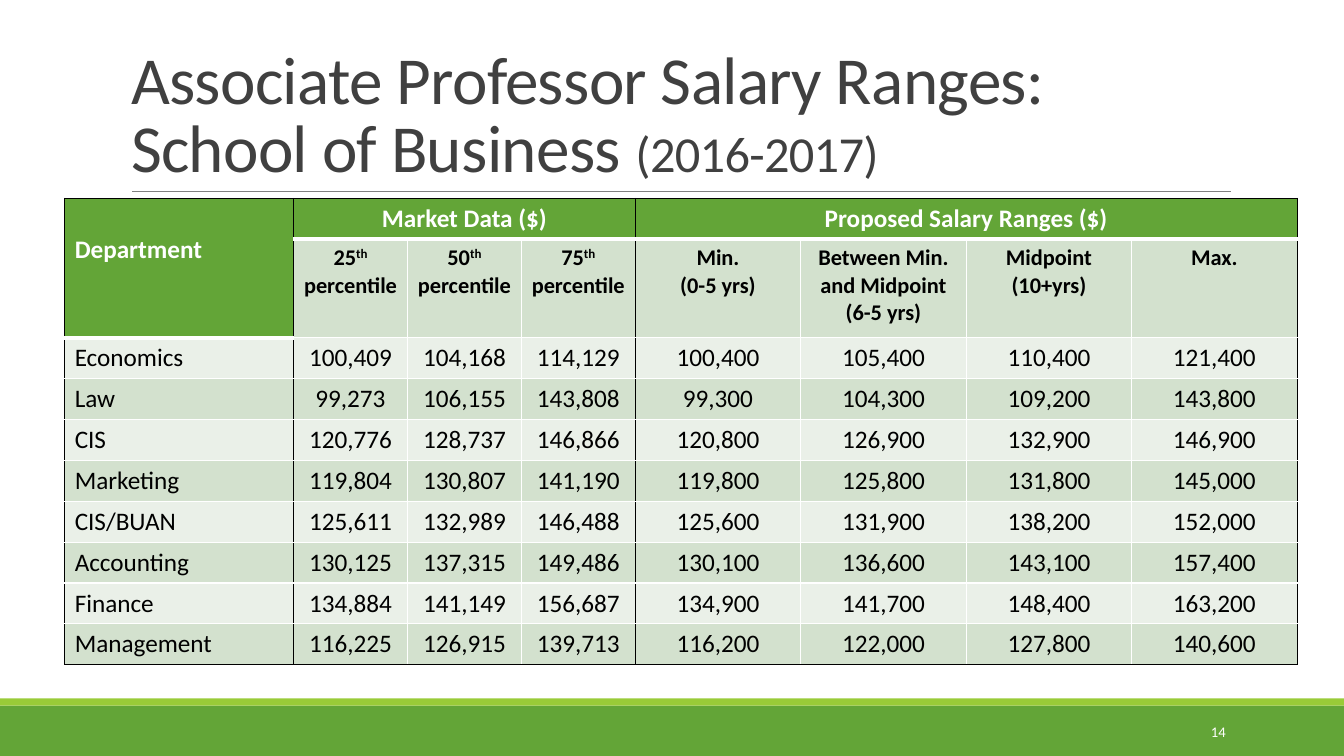
from dataclasses import dataclass

from lxml.etree import SubElement
from pptx import Presentation
from pptx.dml.color import RGBColor
from pptx.enum.shapes import MSO_CONNECTOR, MSO_SHAPE
from pptx.enum.text import MSO_ANCHOR as Anchor, MSO_AUTO_SIZE, PP_ALIGN as Align
from pptx.oxml.ns import qn
from pptx.util import Cm, Pt


@dataclass(frozen=True)
class Theme:
    font: str = "Calibri"
    green: str = "63A537"
    lime: str = "99CB38"
    band_dark: str = "D3E1CE"
    band_light: str = "EAF0E8"
    heading: str = "404040"
    rule: str = "808080"
    black: str = "000000"
    white: str = "FFFFFF"
    title_size: float = 48
    year_size: float = 36
    table_size: float = 18
    subheader_size: float = 16
    number_size: float = 10.5


MARKET_HEADERS = [
    [[(rank, 0), ("th", 30), (" percentile", 0)]] for rank in ("25", "50", "75")
]
RANGE_HEADERS = [
    [[(line, 0)] for line in lines]
    for lines in (
        ("Min.", "(0-5 yrs)"),
        ("Between Min. and Midpoint", "(6-5 yrs)"),
        ("Midpoint", "(10+yrs)"),
        ("Max.",),
    )
]
SALARIES = [
    ("Economics", 100409, 104168, 114129, 100400, 105400, 110400, 121400),
    ("Law", 99273, 106155, 143808, 99300, 104300, 109200, 143800),
    ("CIS", 120776, 128737, 146866, 120800, 126900, 132900, 146900),
    ("Marketing", 119804, 130807, 141190, 119800, 125800, 131800, 145000),
    ("CIS/BUAN", 125611, 132989, 146488, 125600, 131900, 138200, 152000),
    ("Accounting", 130125, 137315, 149486, 130100, 136600, 143100, 157400),
    ("Finance", 134884, 141149, 156687, 134900, 141700, 148400, 163200),
    ("Management", 116225, 126915, 139713, 116200, 122000, 127800, 140600),
]
COLUMN_WIDTHS = [5.77] + [2.87] * 3 + [4.17] * 4
ROW_HEIGHTS = [1.02, 2.48] + [1.02] * len(SALARIES)
GROUP_EDGES = (0, 1, 4, 8)


class SlideBuilder:
    def __init__(self, slide, theme):
        self.slide = slide
        self.theme = theme

    def add_run(self, paragraph, text, size, color, bold=False, baseline=0):
        run = paragraph.add_run()
        run.text = text
        run.font.name = self.theme.font
        run.font.size = Pt(size)
        run.font.bold = bold
        run.font.color.rgb = RGBColor.from_string(color)
        if baseline:
            run.font._element.set("baseline", str(baseline * 1000))
        return run

    def bar(self, top, height, color):
        shape = self.slide.shapes.add_shape(
            MSO_SHAPE.RECTANGLE, 0, Cm(top), Cm(33.87), Cm(height))
        shape.shadow.inherit = False
        shape.fill.solid()
        shape.fill.fore_color.rgb = RGBColor.from_string(color)
        shape.line.fill.background()

    def rule(self, left, right, top):
        line = self.slide.shapes.add_connector(
            MSO_CONNECTOR.STRAIGHT, Cm(left), Cm(top), Cm(right), Cm(top))
        line.line.color.rgb = RGBColor.from_string(self.theme.rule)
        line.line.width = Pt(0.5)
        SubElement(line._element.spPr, qn("a:effectLst"))

    def title(self, lines, year):
        theme = self.theme
        shape = self.slide.shapes.title
        shape.left, shape.top = Cm(3.05), Cm(0.79)
        shape.width, shape.height = Cm(27.94), Cm(4.04)
        frame = shape.text_frame
        frame.word_wrap = True
        frame.auto_size = MSO_AUTO_SIZE.NONE
        frame.vertical_anchor = Anchor.BOTTOM
        paragraph = frame.paragraphs[0]
        paragraph.alignment = Align.LEFT
        paragraph.line_spacing = 0.85
        first, second = lines
        self.add_run(paragraph, first, theme.title_size, theme.heading)
        paragraph.add_line_break()
        self.add_run(paragraph, second, theme.title_size, theme.heading)
        self.add_run(paragraph, year, theme.year_size, theme.heading)
        for run in paragraph.runs:
            run.font._element.set("spc", "-50")

    def slide_number(self, number):
        box = self.slide.shapes.add_textbox(Cm(27.51), Cm(17.93), Cm(3.63), Cm(1.02))
        frame = box.text_frame
        frame.word_wrap = True
        frame.vertical_anchor = Anchor.MIDDLE
        paragraph = frame.paragraphs[0]
        paragraph.alignment = Align.RIGHT
        self.add_run(paragraph, number, self.theme.number_size, self.theme.white)

    def borders(self, cell, row, column):
        theme = self.theme
        bottom, right = row + cell.span_height, column + cell.span_width

        def vertical(edge):
            return (theme.black if edge in GROUP_EDGES else theme.white), 1

        def horizontal(edge):
            if edge in (0, len(ROW_HEIGHTS)):
                return theme.black, 1
            return theme.white, 3 if edge == 1 or (edge == 2 and column == 0) else 1

        edges = {"lnL": vertical(column), "lnR": vertical(right),
                 "lnT": horizontal(row), "lnB": horizontal(bottom)}
        properties = cell._tc.get_or_add_tcPr()
        for tag, (color, width) in edges.items():
            line = SubElement(properties, qn(f"a:{tag}"), w=str(Pt(width)))
            fill = SubElement(line, qn("a:solidFill"))
            SubElement(fill, qn("a:srgbClr"), val=color)

    def cell(self, table, row, column, paragraphs, fill, size, color, bold):
        cell = table.cell(row, column)
        self.borders(cell, row, column)
        cell.fill.solid()
        cell.fill.fore_color.rgb = RGBColor.from_string(fill)
        cell.vertical_anchor = Anchor.TOP
        frame = cell.text_frame
        for index, runs in enumerate(paragraphs):
            paragraph = frame.add_paragraph() if index else frame.paragraphs[0]
            paragraph.alignment = Align.CENTER if column else Align.LEFT
            for text, baseline in runs:
                self.add_run(paragraph, text, size, color, bold, baseline)
        return cell

    def salary_table(self):
        theme = self.theme
        frame = self.slide.shapes.add_table(
            len(ROW_HEIGHTS), len(COLUMN_WIDTHS), Cm(1.63), Cm(5),
            Cm(sum(COLUMN_WIDTHS)), Cm(sum(ROW_HEIGHTS)))
        table = frame.table
        table.first_row = table.horz_banding = False
        for column, width in zip(table.columns, COLUMN_WIDTHS):
            column.width = Cm(width)
        for row, height in zip(table.rows, ROW_HEIGHTS):
            row.height = Cm(height)

        groups = [(0, 1, 0, "Department"), (1, 0, 3, "Market Data ($)"),
                  (4, 0, 7, "Proposed Salary Ranges ($)")]
        for first, last_row, last_column, text in groups:
            table.cell(0, first).merge(table.cell(last_row, last_column))
            self.cell(table, 0, first, [[(text, 0)]], theme.green,
                      theme.table_size, theme.white, True)
        table.cell(0, 0).margin_top = Cm(0.9)

        for column, lines in enumerate(MARKET_HEADERS + RANGE_HEADERS, 1):
            self.cell(table, 1, column, lines, theme.band_dark,
                      theme.subheader_size, theme.black, True)
        for row, (department, *values) in enumerate(SALARIES, 2):
            fill = theme.band_dark if row % 2 else theme.band_light
            texts = [department] + [f"{value:,}" for value in values]
            for column, text in enumerate(texts):
                self.cell(table, row, column, [[(text, 0)]], fill,
                          theme.table_size, theme.black, False)


def main():
    presentation = Presentation()
    presentation.slide_width, presentation.slide_height = Cm(33.87), Cm(19.05)
    theme = Theme()
    builder = SlideBuilder(
        presentation.slides.add_slide(presentation.slide_layouts[5]), theme)
    builder.bar(17.78, 1.27, theme.green)
    builder.bar(17.6, 0.18, theme.lime)
    builder.rule(3.33, 31.01, 4.83)
    builder.title(("Associate Professor Salary Ranges:", "School of Business "),
                  "(2016-2017)")
    builder.salary_table()
    builder.slide_number("14")
    presentation.save("out.pptx")


if __name__ == "__main__":
    main()
